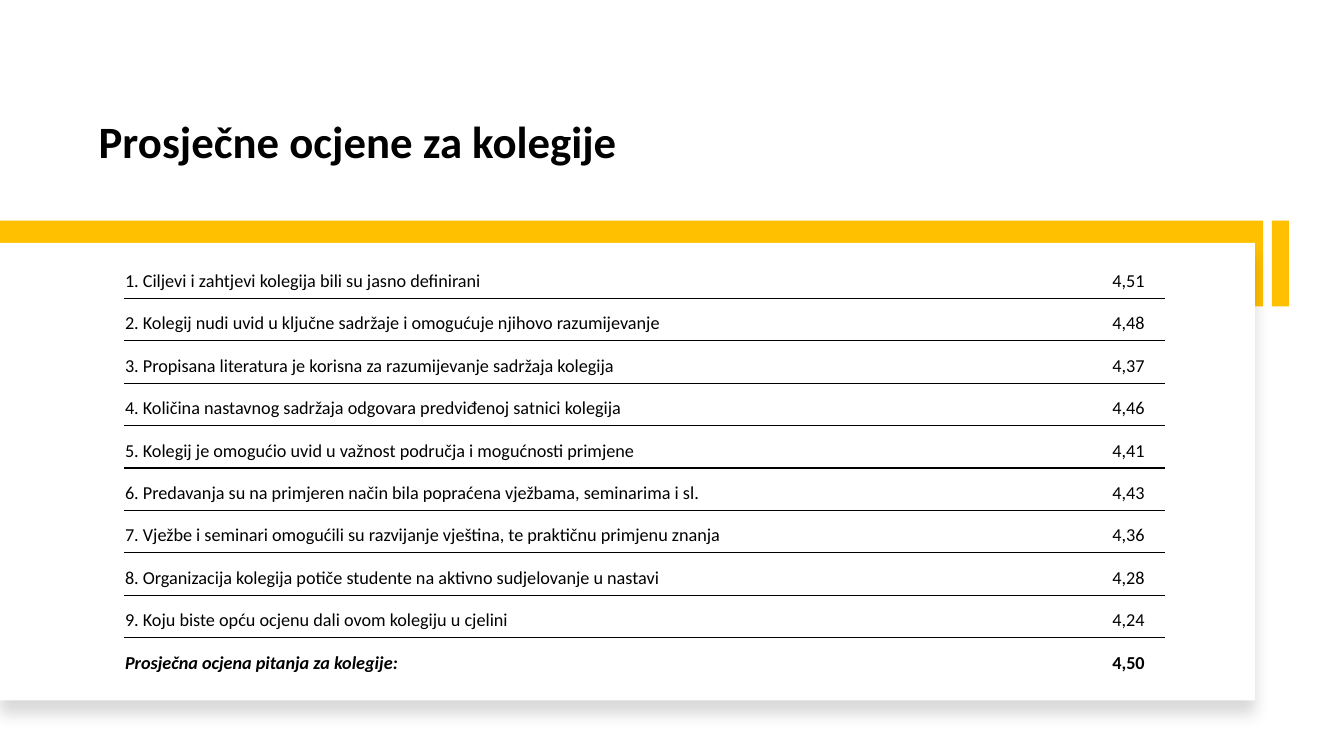
"""Build a slide with a table of average course ratings."""
from lxml import etree
from pptx import Presentation
from pptx.dml.color import RGBColor
from pptx.enum import shapes, text
from pptx.oxml import ns, parse_xml
from pptx.util import Pt


def color(value):
    return RGBColor.from_string(value)


class Deck:
    font, ink, accent, paper = "Calibri", "000000", "FFC000", "FFFFFF"
    plain_table = "{2D5ABB26-0587-4C30-8999-92F81FD0307C}"

    def __init__(self, width, height):
        self.prs = Presentation()
        self.prs.slide_width, self.prs.slide_height = Pt(width), Pt(height)
        self.s = self.prs.slides.add_slide(self.prs.slide_layouts[6])

    def style(self, p, size, bold=False, italic=False):
        f = p.font
        f.name, f.size, f.bold, f.italic = self.font, Pt(size), bold, italic
        f.color.rgb = color(self.ink)

    def title(self, words, *box):
        tf = self.s.shapes.add_textbox(*map(Pt, box)).text_frame
        tf.word_wrap = True
        tf.vertical_anchor = text.MSO_ANCHOR.BOTTOM
        p = tf.paragraphs[0]
        p.text = words
        p.line_spacing, p.space_after = 0.9, Pt(6)
        self.style(p, 32, bold=True)

    def rect(self, fill, *box):
        sp = self.s.shapes.add_shape(shapes.MSO_SHAPE.RECTANGLE, *map(Pt, box))
        sp.shadow.inherit = False
        sp.fill.solid()
        sp.fill.fore_color.rgb = color(fill)
        sp.line.fill.background()
        return sp

    def card(self, *box):
        sp = self.rect(self.paper, *box)
        effects = sp._element.spPr.find(ns.qn("a:effectLst"))
        shadow = etree.SubElement(effects, ns.qn("a:outerShdw"), blurRad=str(Pt(11)),
                                  dist=str(Pt(10)), dir="5400000", algn="t", rotWithShape="0")
        tint = etree.SubElement(shadow, ns.qn("a:srgbClr"), val=self.ink)
        etree.SubElement(tint, ns.qn("a:alpha"), val="15000")

    def border(self, cell, side):
        cell._tc.get_or_add_tcPr().insert(0, parse_xml(
            f'<a:{side} {ns.nsdecls("a")} w="{Pt(1)}"><a:solidFill>'
            f'<a:srgbClr val="{self.ink}"/></a:solidFill></a:{side}>'))

    def table(self, rows, left, top, widths, row_height):
        last = len(rows) - 1
        frame = self.s.shapes.add_table(len(rows), len(widths), Pt(left), Pt(top),
                                        Pt(sum(widths)), Pt(row_height * len(rows)))
        table = frame.table
        table.first_row = table.horz_banding = False
        table._tbl.tblPr.find(ns.qn("a:tableStyleId")).text = self.plain_table
        for column, width in zip(table.columns, widths):
            column.width = Pt(width)
        for i, row in enumerate(rows):
            table.rows[i].height = Pt(row_height)
            for j, words in enumerate(row):
                cell = table.cell(i, j)
                cell.fill.background()
                cell.vertical_anchor = text.MSO_ANCHOR.BOTTOM
                cell.margin_left = cell.margin_right = Pt(0.7)
                cell.margin_top = cell.margin_bottom = Pt(4.3)
                p = cell.text_frame.paragraphs[0]
                p.text = words
                p.alignment = text.PP_ALIGN.CENTER if j else text.PP_ALIGN.LEFT
                self.style(p, 13, bold=i == last, italic=i == last and j == 0)
                if i < last:
                    self.border(cell, "lnB")
                if i > 0:
                    self.border(cell, "lnT")


RATINGS = [
    ("1. Ciljevi i zahtjevi kolegija bili su jasno definirani", "4,51"),
    ("2. Kolegij nudi uvid u ključne sadržaje i omogućuje njihovo razumijevanje", "4,48"),
    ("3. Propisana literatura je korisna za razumijevanje sadržaja kolegija", "4,37"),
    ("4. Količina nastavnog sadržaja odgovara predviđenoj satnici kolegija", "4,46"),
    ("5. Kolegij je omogućio uvid u važnost područja i mogućnosti primjene", "4,41"),
    ("6. Predavanja su na primjeren način bila popraćena vježbama, seminarima i sl.", "4,43"),
    ("7. Vježbe i seminari omogućili su razvijanje vještina, te praktičnu primjenu znanja", "4,36"),
    ("8. Organizacija kolegija potiče studente na aktivno sudjelovanje u nastavi", "4,28"),
    ("9. Koju biste opću ocjenu dali ovom kolegiju u cjelini", "4,24"),
    ("Prosječna ocjena pitanja za kolegije:", "4,50"),
]


def main():
    deck = Deck(960, 540)
    deck.title("Prosječne ocjene za kolegije", 63.4, 30.2, 727.2, 93.6)
    deck.rect(deck.accent, 908.6, 157.6, 12.2, 61.2)
    deck.rect(deck.accent, 0, 157.6, 902.2, 61.2)
    deck.card(0, 173.5, 896.4, 326.9)
    deck.table(RATINGS, 88.6, 182.9, (691.7, 51.6), 30.3)
    deck.prs.save("out.pptx")


if __name__ == "__main__":
    main()
